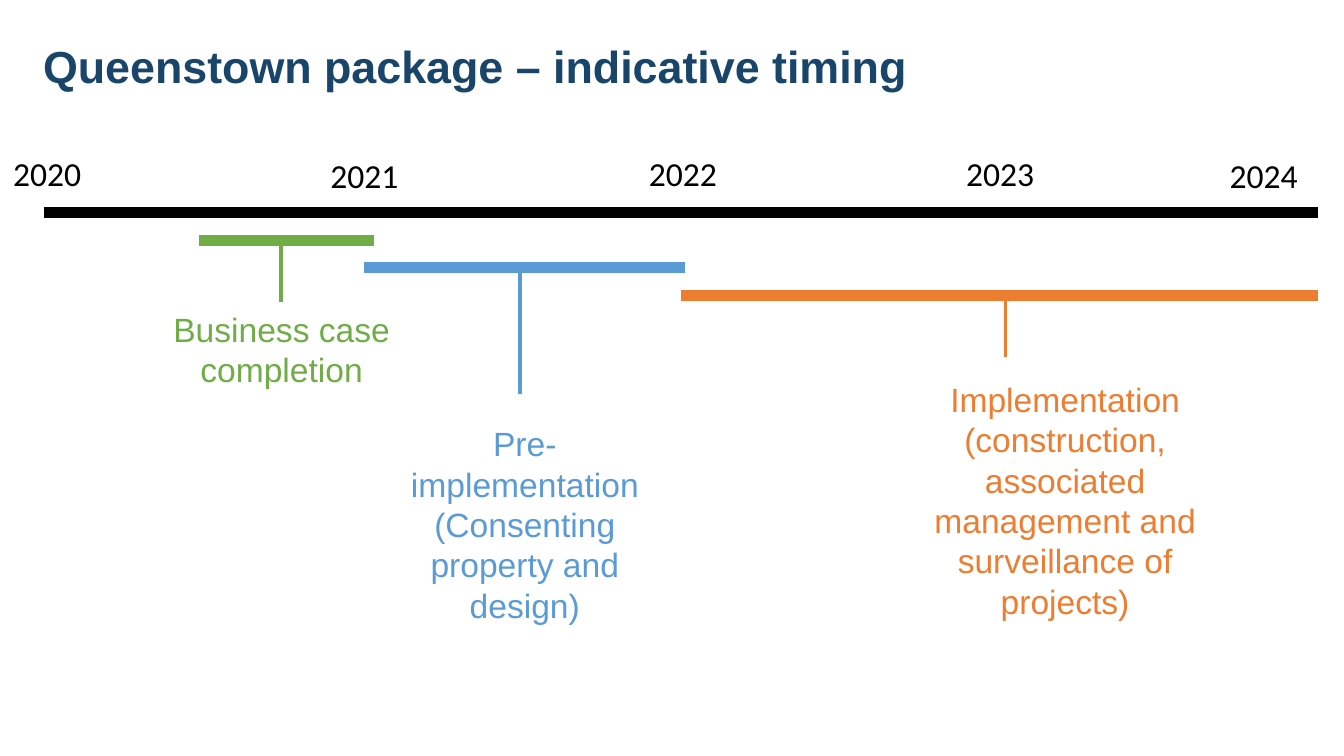
import pptx
import pptx.util
import pptx.dml.color
import pptx.enum.shapes
import pptx.enum.text
from lxml import etree

Inches = pptx.util.Inches
Pt = pptx.util.Pt
ALIGN = pptx.enum.text.PP_ALIGN
ANCHOR = pptx.enum.text.MSO_ANCHOR
FIT = pptx.enum.text.MSO_AUTO_SIZE

COLORS = {"title": "19456B", "axis": "000000", "business": "70AD47",
          "pre": "5B9BD5", "implementation": "ED7D31"}
TITLE = "Queenstown package – indicative timing"
YEARS = [("2020", 0, 1.09), ("2021", 2.36, 1.1), ("2022", 4.73, 1.09),
         ("2023", 7.09, 1.09), ("2024", 9.05, 1.1)]
AXIS_LEFT, AXIS_RIGHT, AXIS_Y = 0.33, 9.81, 1.58
LABEL_WIDTH = 2.15
PHASES = [
    {"color": "business", "bar": (1.48, 2.78, 1.79), "stem": (2.09, 1.8, 2.25),
     "label": (1.02, 2.25, 0.71), "lines": ["Business case completion"]},
    {"color": "pre", "bar": (2.71, 5.1, 1.99), "stem": (3.87, 2.03, 2.93),
     "label": (2.83, 3.1, 1.62),
     "lines": ["Pre-implementation", "(Consenting property and design)"]},
    {"color": "implementation", "bar": (5.07, AXIS_RIGHT, 2.2),
     "stem": (7.48, 2.2, 2.66), "label": (6.85, 2.77, 2.22),
     "lines": ["Implementation (construction, associated management and "
               "surveillance of projects)"]},
]


def rgb(name):
    return pptx.dml.color.RGBColor.from_string(COLORS[name])


def set_all(obj, values):
    for name, value in values.items():
        setattr(obj, name, value)


def write(tf, lines, color, font, paragraph):
    for i, line in enumerate(lines):
        p = tf.paragraphs[0] if i == 0 else tf.add_paragraph()
        set_all(p, paragraph)
        r = p.add_run()
        r.text = line
        set_all(r.font, font)
        r.font.color.rgb = rgb(color)


def add_label(s, box, lines, color, font, align):
    tf = s.shapes.add_textbox(*map(Inches, box)).text_frame
    set_all(tf, {"word_wrap": True, "auto_size": FIT.SHAPE_TO_FIT_TEXT})
    write(tf, lines, color, {"name": font, "size": Pt(18)}, {"alignment": align})


def add_line(s, start, end, color, width):
    line = s.shapes.add_connector(pptx.enum.shapes.MSO_CONNECTOR.STRAIGHT,
                                  *map(Inches, start + end))
    line.line.color.rgb = rgb(color)
    line.line.width = Pt(width)
    etree.SubElement(line._element.spPr, pptx.oxml.ns.qn("a:effectLst"))


prs = pptx.Presentation()
set_all(prs, {"slide_width": Inches(10), "slide_height": Inches(10 * 9 / 16)})
s = prs.slides.add_slide(prs.slide_layouts[5])

title = s.shapes.title
set_all(title, {"left": Inches(0.22), "top": Inches(-0.1),
                "width": Inches(7.32), "height": Inches(0.84)})
set_all(title.text_frame, {"vertical_anchor": ANCHOR.BOTTOM, "word_wrap": True,
                           "auto_size": FIT.NONE})
write(title.text_frame, [TITLE], "title",
      {"name": "Arial", "size": Pt(24), "bold": True},
      {"alignment": ALIGN.LEFT, "line_spacing": 0.9})

add_line(s, (AXIS_LEFT, AXIS_Y), (AXIS_RIGHT, AXIS_Y), "axis", 6)
for year, x, y in YEARS:
    add_label(s, (x, y, 0.75, 0.41), [year], "axis", "Calibri", ALIGN.LEFT)

for phase in PHASES:
    x, y, height = phase["label"]
    add_label(s, (x, y, LABEL_WIDTH, height), phase["lines"], phase["color"],
              "Arial", ALIGN.CENTER)

for phase in PHASES:
    left, right, y = phase["bar"]
    add_line(s, (left, y), (right, y), phase["color"], 6)

for phase in PHASES:
    x, top, bottom = phase["stem"]
    add_line(s, (x, top), (x, bottom), phase["color"], 1.75)

prs.save("out.pptx")
